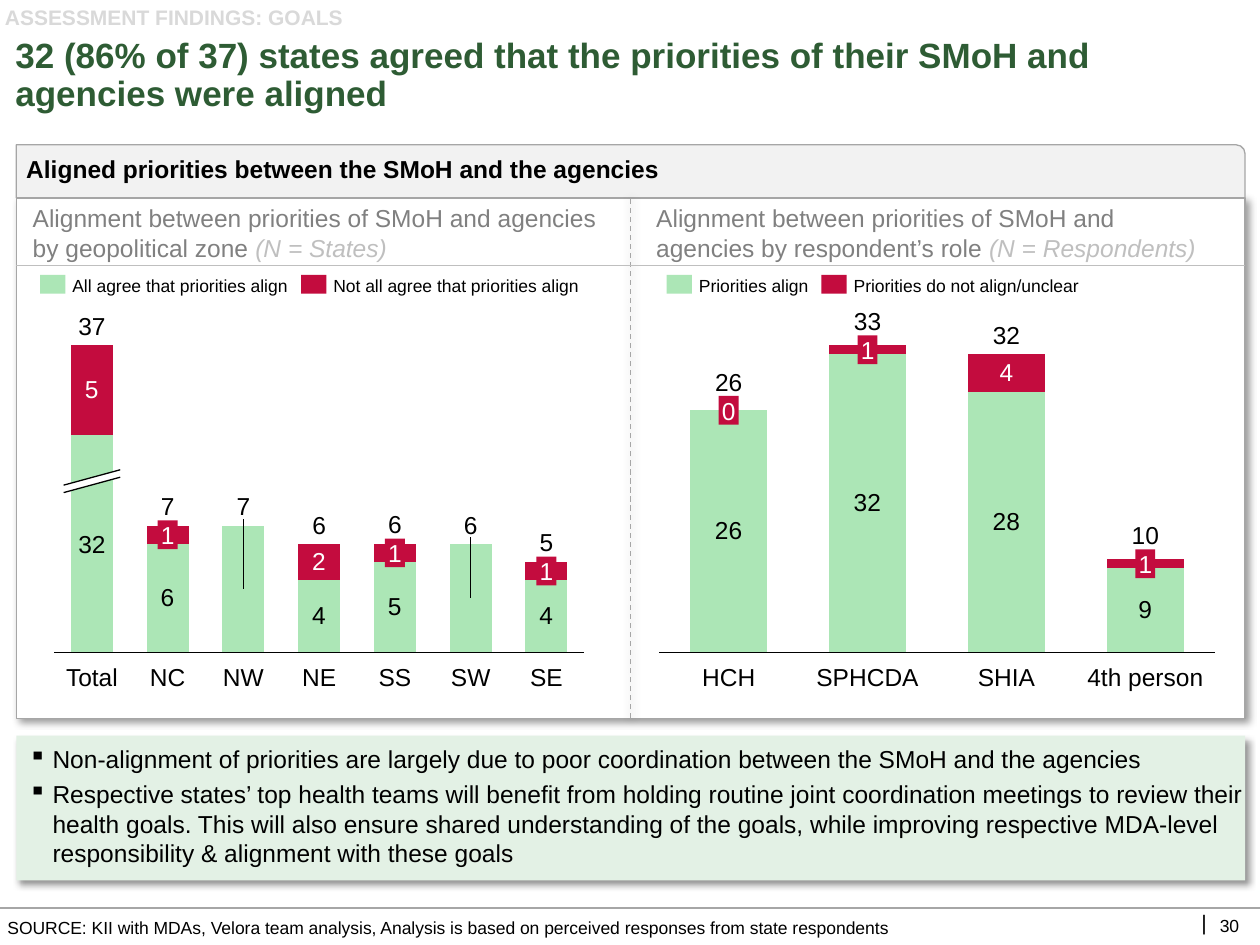
from dataclasses import dataclass

from lxml import etree
from pptx import Presentation
from pptx.chart.data import CategoryChartData
from pptx.dml.color import RGBColor
from pptx.enum.chart import XL_CHART_TYPE, XL_LABEL_POSITION, XL_TICK_LABEL_POSITION, XL_TICK_MARK
from pptx.enum.dml import MSO_LINE
from pptx.enum.shapes import MSO_CONNECTOR, MSO_SHAPE
from pptx.enum.text import MSO_ANCHOR, MSO_AUTO_SIZE, PP_ALIGN
from pptx.oxml import parse_xml
from pptx.oxml.ns import nsdecls, qn
from pptx.util import Cm, Pt

RECT, ROUND_ONE = MSO_SHAPE.RECTANGLE, MSO_SHAPE.ROUND_1_RECTANGLE
STRAIGHT, DASH = MSO_CONNECTOR.STRAIGHT, MSO_LINE.DASH
STACKED, CENTER_LABEL = XL_CHART_TYPE.COLUMN_STACKED, XL_LABEL_POSITION.CENTER
NO_LABELS, NO_TICKS = XL_TICK_LABEL_POSITION.NONE, XL_TICK_MARK.NONE
TOP, MIDDLE, BOTTOM = MSO_ANCHOR.TOP, MSO_ANCHOR.MIDDLE, MSO_ANCHOR.BOTTOM
LEFT, CENTER, RIGHT = PP_ALIGN.LEFT, PP_ALIGN.CENTER, PP_ALIGN.RIGHT


@dataclass(frozen=True)
class Theme:
    """Colours, font and type sizes of the slide."""
    font: str = "Arial"
    black: str = "000000"
    white: str = "FFFFFF"
    title: str = "2E5C34"
    tag: str = "D9D9D9"
    muted: str = "808080"
    faint: str = "BFBFBF"
    edge: str = "A6A6A6"
    head: str = "F2F2F2"
    takeaway: str = "E3F1E5"
    agree: str = "ACE6B6"
    disagree: str = "C30C3E"
    title_size: int = 20
    body_size: int = 14
    tag_size: int = 12
    small_size: int = 10


THEME = Theme()
ROW = 0.58
INSET = 0.23


def color(value):
    """Turn a hex string into a colour."""
    return RGBColor.from_string(value)


def set_font(font, size=THEME.body_size, ink=THEME.black, bold=False, italic=False):
    """Format a font."""
    font.name, font.size, font.bold, font.italic = THEME.font, Pt(size), bold, italic
    font.color.rgb = color(ink)


def write(shape, *pieces, insets=(0, 0, 0, 0), anchor=MIDDLE, align=LEFT, wrap=True, **style):
    """Write one paragraph from strings or (string, extra format) pairs."""
    frame = shape.text_frame
    frame.auto_size, frame.word_wrap, frame.vertical_anchor = MSO_AUTO_SIZE.NONE, wrap, anchor
    (frame.margin_left, frame.margin_top,
     frame.margin_right, frame.margin_bottom) = [Cm(inset) for inset in insets]
    para = frame.paragraphs[0]
    para.alignment = align
    for piece in pieces:
        text, extra = piece if isinstance(piece, tuple) else (piece, {})
        span = para.add_run()
        span.text = text
        set_font(span.font, **{**style, **extra})
    return para


def add_text(page, box, *pieces, **style):
    """Add a text box."""
    return write(page.shapes.add_textbox(*map(Cm, box)), *pieces, **style)


def set_shadow(shape, blur=None, distance=0, angle=0):
    """Replace the theme shadow by none or by a soft black one."""
    effects = etree.SubElement(shape._element.spPr, qn("a:effectLst"))
    if blur:
        effects.append(parse_xml(
            f'<a:outerShdw {nsdecls("a")} blurRad="{Pt(blur)}" dist="{Pt(distance)}" '
            f'dir="{angle * 60000}" algn="tl" rotWithShape="0"><a:srgbClr val="{THEME.black}">'
            '<a:alpha val="40000"/></a:srgbClr></a:outerShdw>'))


def add_block(page, box, fill, kind=RECT, edge=None, raised=False):
    """Add a filled shape with an optional edge and shadow."""
    block = page.shapes.add_shape(kind, *map(Cm, box))
    block.fill.solid()
    block.fill.fore_color.rgb = color(fill)
    if edge:
        block.line.color.rgb = color(edge)
        block.line.width = Pt(0.75)
    else:
        block.line.fill.background()
    set_shadow(block, *((4, 3, 45) if raised else ()))
    return block


def add_line(page, start, end, ink=THEME.black, width=0.75, dash=None, blur=None):
    """Add a straight line between two points."""
    line = page.shapes.add_connector(STRAIGHT, *map(Cm, (*start, *end)))
    line.line.color.rgb = color(ink)
    line.line.width = Pt(width)
    if dash:
        line.line.dash_style = dash
    set_shadow(line, blur)


def add_heading(page, tag, title):
    """Place the section tag and the title."""
    holder = page.shapes.title
    holder.left, holder.top, holder.width, holder.height = map(Cm, (0.13, 0.76, 25.15, 1.55))
    write(holder, title, insets=(0.18, 0.1, 0.18, 0.1), size=THEME.title_size,
          ink=THEME.title, bold=True).line_spacing = 0.9
    add_text(page, (-0.1, 0.1, 24.6, 0.51), tag, insets=(0.2, 0, 0, 0), anchor=TOP,
             size=THEME.tag_size, ink=THEME.tag, bold=True)


def add_panel(page, box, heading):
    """Place the framed panel with its heading bar and divider."""
    left, top, width, height = box
    bar = 1.07
    add_block(page, (left, top + bar, width, height - bar), THEME.white,
              edge=THEME.edge, raised=True)
    head = add_block(page, (left, top, width, bar), THEME.head, ROUND_ONE, THEME.edge)
    write(head, heading, insets=(0.2, 0, 0.1, 0.1), bold=True)
    middle = left + width / 2
    add_line(page, (middle, top + height), (middle, top + bar), THEME.edge, dash=DASH, blur=5)
    add_line(page, (left, top + 2.44), (left + width, top + 2.44), THEME.faint)


def add_legend(page, lefts, names, top=5.54):
    """Place the two colour keys."""
    widths = (lefts[1] - lefts[0] - 0.65, 5)
    for left, width, name, fill in zip(lefts, widths, names, (THEME.agree, THEME.disagree)):
        add_block(page, (left, top, 0.51, 0.38), fill)
        add_text(page, (left + 0.65, top, width, 0.43), name, size=THEME.small_size)


def add_stack(page, box, names, agree, disagree, totals, broken=None):
    """Place a stacked column chart with totals and category names."""
    left, top, width, height = box
    peak = max(low + (high or 0) for low, high in zip(agree, disagree))
    unit = (height - 2 * INSET) / peak
    base, step = top + height - INSET, (width - 2 * INSET) / len(names)
    tight = [high is not None and high * unit < ROW for high in disagree]

    data = CategoryChartData()
    data.categories = [str(number + 1) for number in range(len(names))]
    data.add_series("Series 1", agree)
    data.add_series("Series 2", disagree)
    chart = page.shapes.add_chart(STACKED, *map(Cm, box), data).chart
    chart.has_legend = chart.has_title = False
    set_font(chart.font, THEME.small_size)
    values, categories, plot = chart.value_axis, chart.category_axis, chart.plots[0]
    values.minimum_scale, values.maximum_scale = 0, peak
    values.has_major_gridlines = values.visible = False
    categories.tick_label_position, categories.major_tick_mark = NO_LABELS, NO_TICKS
    categories.format.line.color.rgb = color(THEME.black)
    categories.format.line.width = Pt(0.75)
    plot.gap_width, plot.overlap, plot.vary_by_categories = 80, 100, False

    area = chart._chartSpace.chart.plotArea
    for old in area.findall(qn("c:layout")):
        area.remove(old)
    layout = etree.Element(qn("c:layout"))
    manual = etree.SubElement(layout, qn("c:manualLayout"))
    x, y = INSET / width, INSET / height
    for key, value in (("layoutTarget", "inner"), ("xMode", "edge"), ("yMode", "edge"),
                       ("x", x), ("y", y), ("w", 1 - 2 * x), ("h", 1 - 2 * y)):
        etree.SubElement(manual, qn(f"c:{key}")).set("val", str(value))
    area.insert(0, layout)

    inks = ((THEME.agree, THEME.black), (THEME.disagree, THEME.white))
    for number, (series, (fill, ink)) in enumerate(zip(plot.series, inks)):
        series.format.fill.solid()
        series.format.fill.fore_color.rgb = color(fill)
        series.data_labels.show_value = False
        for index, high in enumerate(disagree):
            hidden = tight[index] if number else broken and index == 0
            if high is not None and not hidden:
                label = series.points[index].data_label
                set_font(label.font, ink=ink)
                label.position = CENTER_LABEL

    for index, (name, low, high, total) in enumerate(zip(names, agree, disagree, totals)):
        center = left + INSET + step * (index + 0.5)
        ceiling = base - (low + (high or 0)) * unit
        floor = ceiling - 0.1
        if tight[index]:
            patch_top = ceiling + high * unit / 2 - ROW / 2
            floor = min(floor, patch_top)
            patch = add_block(page, (center - 0.2, patch_top, 0.4, ROW), THEME.disagree)
            write(patch, str(high), align=CENTER, wrap=False, ink=THEME.white)
        if high is None:
            add_line(page, (center, floor - 0.03), (center, base - low * unit / 2))
        add_text(page, (center - 0.35, floor - ROW, 0.7, ROW), total,
                 anchor=BOTTOM, align=CENTER, wrap=False)
        add_text(page, (center - step / 2, base + 0.19, step, ROW), name,
                 anchor=TOP, align=CENTER, wrap=False)
    if broken:
        add_break(page, (left + INSET + step / 2 - 0.57, 9.47, 1.14, 0.46))
        add_text(page, (left + INSET + step / 2 - 0.35, base - agree[0] * unit / 2 - ROW / 2,
                        0.7, ROW), broken, align=CENTER, wrap=False)


def add_break(page, box, gap=0.15):
    """Place the slanted cut across a shortened column."""
    left, top, width, height = box
    right, bottom = left + width, top + height
    corners = [(left, bottom - gap), (right, top), (right, top + gap), (left, bottom)]
    start, *others = [(Cm(x), Cm(y)) for x, y in corners]
    builder = page.shapes.build_freeform(*start)
    builder.add_line_segments(others, close=True)
    cut = builder.convert_to_shape()
    cut.fill.solid()
    cut.fill.fore_color.rgb = color(THEME.white)
    cut.line.fill.background()
    set_shadow(cut)
    add_line(page, corners[0], corners[1])
    add_line(page, corners[3], corners[2])


def add_takeaways(page, box, points):
    """Place the shaded box of bulleted conclusions."""
    block = add_block(page, box, THEME.takeaway, raised=True)
    para = write(block, points[0], insets=(0.25, 0.1, 0, 0.2))
    for point in points[1:]:
        para = block.text_frame.add_paragraph()
        para.alignment = LEFT
        span = para.add_run()
        span.text = point
        set_font(span.font)
    for number, para in enumerate(block.text_frame.paragraphs):
        props = para._p.get_or_add_pPr()
        props.set("marL", str(Cm(0.48)))
        props.set("indent", str(Cm(-0.48)))
        etree.SubElement(props, qn("a:buChar")).set("char", "▪")
        para.space_before, para.space_after = Pt(1.5 if number else 0), Pt(2)


def add_footer(page, source, number):
    """Place the source line and the page number."""
    add_line(page, (0, 18.31), (25.4, 18.31), THEME.edge, 1)
    small = {"size": THEME.small_size, "anchor": TOP}
    add_text(page, (0.15, 18.49, 18.92, 0.43), source, **small)
    add_text(page, (24.59, 18.44, 0.53, 0.43), number, wrap=False, **small)
    add_text(page, (24.23, 18.34, 0.1, 0.51), "|", align=RIGHT, wrap=False, size=THEME.tag_size)


def main():
    """Build and save the slide."""
    deck = Presentation()
    deck.slide_width, deck.slide_height = Cm(25.4), Cm(19.05)
    page = deck.slides.add_slide(deck.slide_layouts[5])
    add_heading(page, "ASSESSMENT FINDINGS: GOALS",
                "32 (86% of 37) states agreed that the priorities of their SMoH and "
                "agencies were aligned")
    add_takeaways(page, (0.33, 14.83, 24.77, 2.92), (
        "Non-alignment of priorities are largely due to poor coordination between the SMoH "
        "and the agencies",
        "Respective states’ top health teams will benefit from holding routine joint "
        "coordination meetings to review their health goals. This will also ensure shared "
        "understanding of the goals, while improving respective MDA-level responsibility & "
        "alignment with these goals"))
    add_panel(page, (0.33, 2.92, 24.77, 11.56),
              "Aligned priorities between the SMoH and the agencies")
    note = {"ink": THEME.faint, "italic": True}
    for left, width, subject, unit in ((0.66, 11.68, "geopolitical zone", "States"),
                                       (13.23, 11.28, "respondent’s role", "Respondents")):
        add_text(page, (left, 4.06, width, 1.27),
                 f"Alignment between priorities of SMoH and agencies by {subject} ",
                 (f"(N = {unit})", note), ink=THEME.muted)
    add_stack(page, (0.86, 6.73, 11.15, 6.65), ("Total", "NC", "NW", "NE", "SS", "SW", "SE"),
              (12, 6, 7, 4, 5, 6, 4), (5, 1, None, 2, 1, None, 1),
              ("37", "7", "7", "6", "6", "6", "5"), broken="32")
    add_legend(page, (0.81, 6.07),
               ("All agree that priorities align", "Not all agree that priorities align"))
    add_stack(page, (13.06, 6.73, 11.66, 6.65), ("HCH", "SPHCDA", "SHIA", "4th person"),
              (26, 32, 28, 9), (0, 1, 4, 1), ("26", "33", "32", "10"))
    add_legend(page, (13.44, 16.56), ("Priorities align", "Priorities do not align/unclear"))
    add_footer(page, "SOURCE: KII with MDAs, Velora team analysis, Analysis is based on "
                     "perceived responses from state respondents", "30")
    deck.save("out.pptx")


if __name__ == "__main__":
    main()
